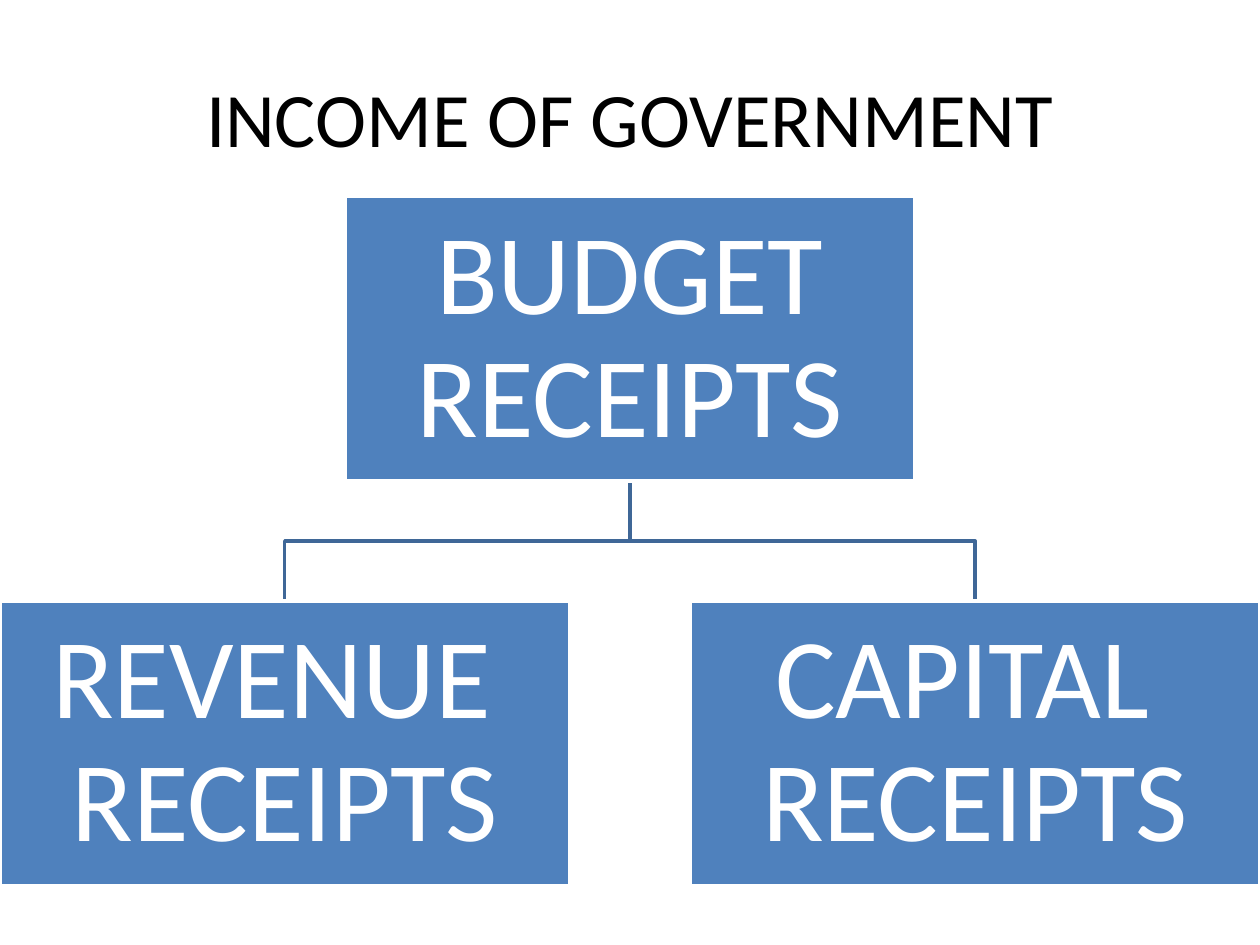
from dataclasses import dataclass

from lxml import etree
from pptx import Presentation
from pptx.dml.color import RGBColor
from pptx.enum.shapes import MSO_SHAPE
from pptx.enum.text import MSO_ANCHOR, PP_ALIGN
from pptx.util import Inches, Pt

RECT = MSO_SHAPE.RECTANGLE
MIDDLE = MSO_ANCHOR.MIDDLE
CENTER = PP_ALIGN.CENTER

WIDTH, HEIGHT = 10, 7.5
BOX_W, BOX_H = 4.52, 2.26
ROOT_TOP, CHILD_TOP = 1.56, 4.77
MID = WIDTH / 2
COLUMN_OFFSET = 2.74
CHILDREN = [(-1, ["REVENUE ", "RECEIPTS"]), (1, ["CAPITAL ", "RECEIPTS"])]


@dataclass(frozen=True)
class Theme:
    """Colours, type sizes and line width of the slide."""
    font: str = "Calibri"
    ink: RGBColor = RGBColor(0x00, 0x00, 0x00)
    paper: RGBColor = RGBColor(0xFF, 0xFF, 0xFF)
    box: RGBColor = RGBColor(0x4F, 0x81, 0xBD)
    branch: RGBColor = RGBColor(0x3F, 0x67, 0x97)
    title_size: int = 44
    box_size: int = 65
    line_width: int = 2


THEME = Theme()


def write_centred(tf, lines, size, color):
    """Write one centred paragraph, with a line break between the lines."""
    tf.word_wrap = True
    tf.vertical_anchor = MIDDLE
    p = tf.paragraphs[0]
    p.alignment = CENTER
    for i, line in enumerate(lines):
        if i:
            p.add_line_break()
        r = p.add_run()
        r.text = line
        r.font.name = THEME.font
        r.font.size = Pt(size)
        r.font.color.rgb = color
    return p


def set_line(s, color):
    """Give a shape its outline and no shadow."""
    s.shadow.inherit = False
    s.line.color.rgb = color
    s.line.width = Pt(THEME.line_width)


def add_title(slide, text):
    """Add the slide title."""
    s = slide.shapes.add_textbox(Inches(0.5), Inches(0.3), Inches(WIDTH - 1), Inches(1.25))
    write_centred(s.text_frame, [text], THEME.title_size, THEME.ink)


def add_box(slide, center, top, lines):
    """Add a chart box centred on a column."""
    s = slide.shapes.add_shape(
        RECT, Inches(center - BOX_W / 2), Inches(top), Inches(BOX_W), Inches(BOX_H))
    s.fill.solid()
    s.fill.fore_color.rgb = THEME.box
    set_line(s, THEME.paper)
    tf = s.text_frame
    tf.margin_left = tf.margin_right = tf.margin_top = tf.margin_bottom = Inches(0.05)
    p = write_centred(tf, lines, THEME.box_size, THEME.paper)
    p.line_spacing = 0.9


def add_branch(slide, center):
    """Add the elbow line from the root box down to a child column."""
    start = ROOT_TOP + BOX_H
    bend = (start + CHILD_TOP) / 2
    points = [(MID, bend), (center, bend), (center, CHILD_TOP)]
    builder = slide.shapes.build_freeform(Inches(MID), Inches(start))
    builder.add_line_segments([(Inches(x), Inches(y)) for x, y in points], close=False)
    s = builder.convert_to_shape()
    s.fill.background()
    set_line(s, THEME.branch)


def main():
    """Build and save the slide."""
    prs = Presentation()
    prs.slide_width, prs.slide_height = Inches(WIDTH), Inches(HEIGHT)
    slide = prs.slides.add_slide(prs.slide_layouts[6])
    for side, _ in reversed(CHILDREN):
        add_branch(slide, MID + side * COLUMN_OFFSET)
    add_box(slide, MID, ROOT_TOP, ["BUDGET RECEIPTS"])
    for side, lines in CHILDREN:
        add_box(slide, MID + side * COLUMN_OFFSET, CHILD_TOP, lines)
    add_title(slide, "INCOME OF GOVERNMENT")
    prs.save("out.pptx")


if __name__ == "__main__":
    main()
